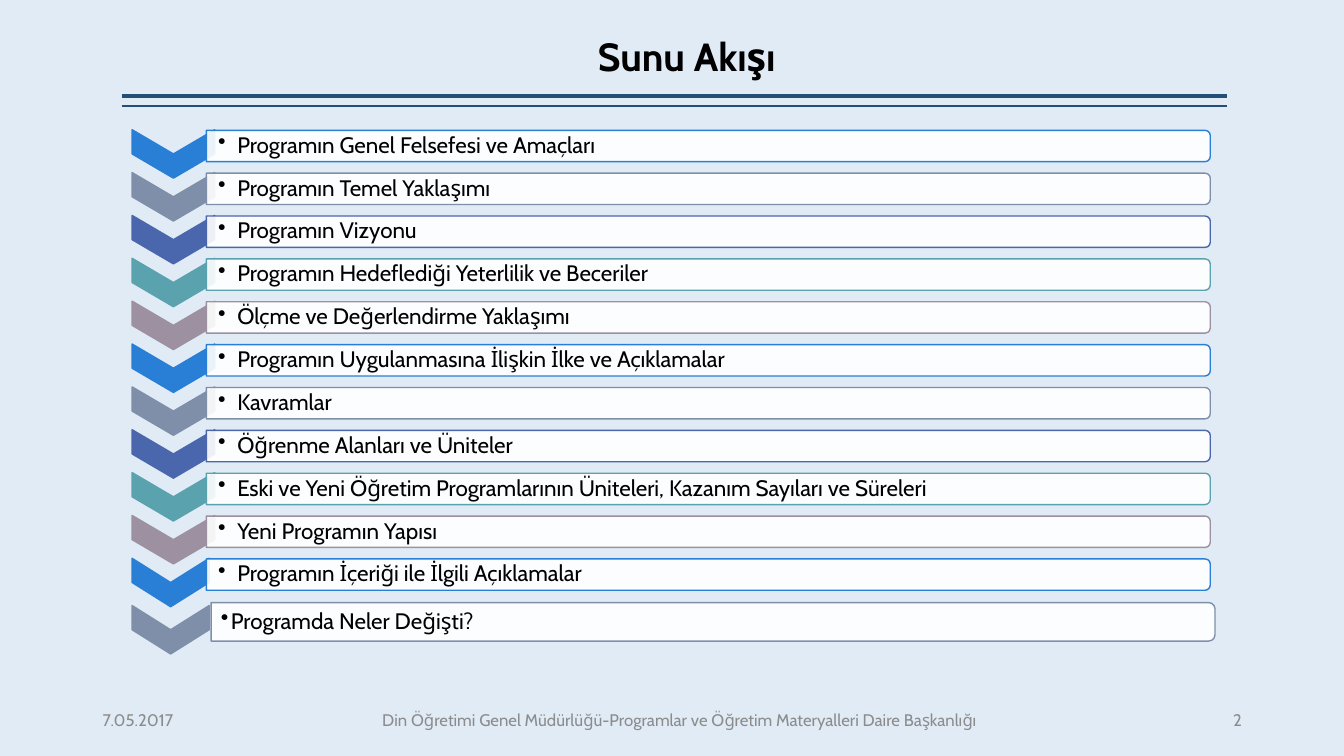
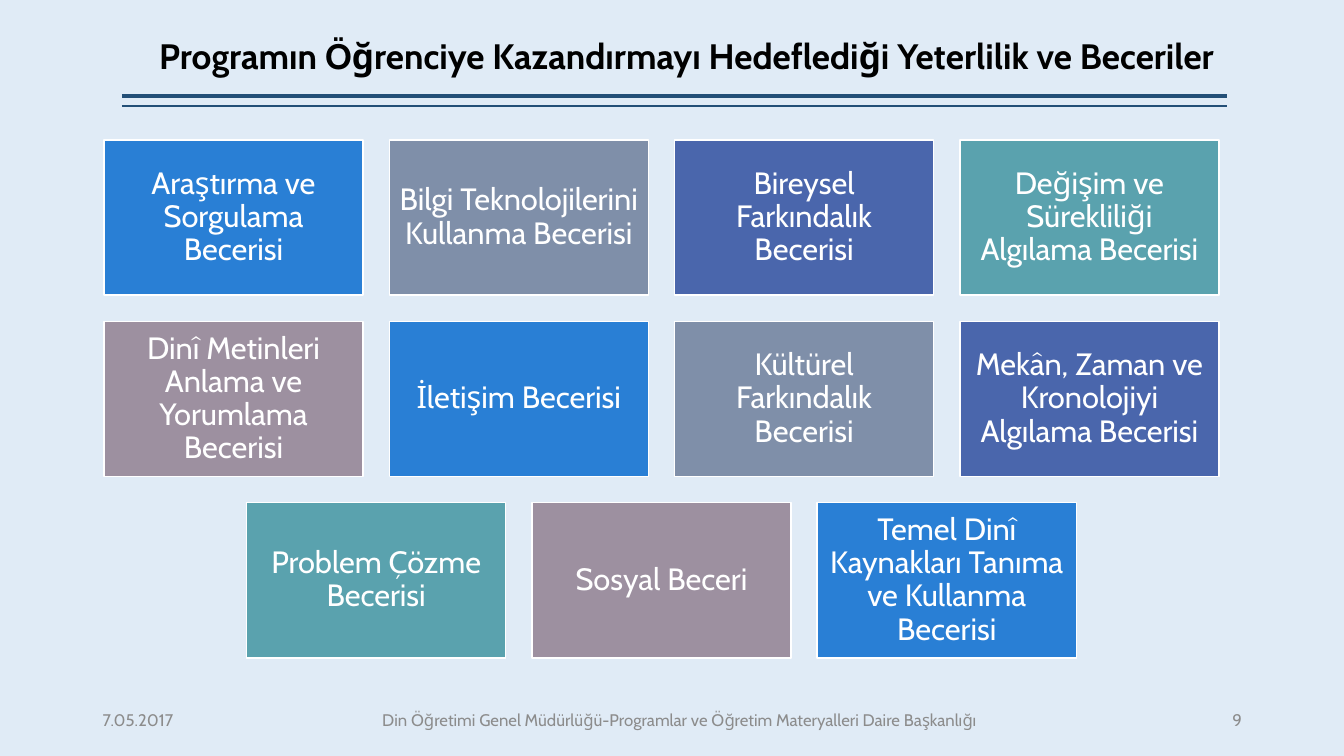
"""Build two slides: the talk outline and the grid of skills."""
from itertools import cycle

from lxml.etree import SubElement
from pptx import Presentation
from pptx.dml.color import RGBColor
from pptx.enum.shapes import MSO_CONNECTOR as Connector, MSO_SHAPE as Shape
from pptx.enum.text import MSO_ANCHOR as Anchor, MSO_AUTO_SIZE as AutoSize, PP_ALIGN as Align
from pptx.oxml.ns import qn
from pptx.util import Cm, Pt

COLORS = {
    "background": "E0EBF6", "rule": "234F77", "text": "000000", "footer": "8C8C8C",
    "white": "FFFFFF", "blue": "297FD5", "slate": "7F8FA9", "indigo": "4A66AC",
    "teal": "5AA2AE", "mauve": "9D90A0",
}
ACCENTS = ["blue", "slate", "indigo", "teal", "mauve"]
FONT = "Cabin"
DATE = "7.05.2017"
DEPARTMENT = "Din Öğretimi Genel Müdürlüğü-Programlar ve Öğretim Materyalleri Daire Başkanlığı"

TOPICS = [
    "Programın Genel Felsefesi ve Amaçları",
    "Programın Temel Yaklaşımı",
    "Programın Vizyonu",
    "Programın Hedeflediği Yeterlilik ve Beceriler",
    "Ölçme ve Değerlendirme Yaklaşımı",
    "Programın Uygulanmasına İlişkin İlke ve Açıklamalar",
    "Kavramlar",
    "Öğrenme Alanları ve Üniteler",
    "Eski ve Yeni Öğretim Programlarının Üniteleri, Kazanım Sayıları ve Süreleri",
    "Yeni Programın Yapısı",
    "Programın İçeriği ile İlgili Açıklamalar",
    "Programda Neler Değişti?",
]
SKILLS = [
    "Araştırma ve Sorgulama Becerisi",
    "Bilgi Teknolojilerini Kullanma Becerisi",
    "Bireysel Farkındalık Becerisi",
    "Değişim ve Sürekliliği Algılama Becerisi",
    "Dinî Metinleri Anlama ve Yorumlama Becerisi",
    "İletişim Becerisi",
    "Kültürel Farkındalık Becerisi",
    "Mekân, Zaman ve Kronolojiyi Algılama Becerisi",
    "Problem Çözme Becerisi",
    "Sosyal Beceri",
    "Temel Dinî Kaynakları Tanıma ve Kullanma Becerisi",
]


def rgb(name):
    """Return the named palette colour."""
    return RGBColor.from_string(COLORS[name])


class Deck:
    """Hold the shared style and the slide being built."""

    def __init__(self):
        """Start a wide presentation with a plain background."""
        self.prs = Presentation()
        self.prs.slide_width, self.prs.slide_height = Cm(33.87), Cm(19.05)
        backdrop = self.prs.slide_master.background.fill
        backdrop.solid()
        backdrop.fore_color.rgb = rgb("background")
        self.slide = None

    def new_slide(self, title, number, size):
        """Add a slide with its title, double rule and footer."""
        self.slide = self.prs.slides.add_slide(self.prs.slide_layouts[5])
        for y, weight in ((2.41, 3), (2.67, 1)):
            self.rule(y, weight)
        heading = self.slide.shapes.title
        heading.left, heading.top = Cm(3.07), Cm(0.41)
        heading.width, heading.height = Cm(28.47), Cm(2.13)
        self.set_text(heading, title, size, "text", Align.CENTER, bold=True)
        for text, left, width, align in (
            (DATE, 2.34, 3.18, Align.LEFT),
            (DEPARTMENT, 6.35, 21.56, Align.CENTER),
            (str(number), 28.6, 2.95, Align.RIGHT),
        ):
            self.set_text(self.text_box(left, 17.65, width, 1.02), text, 12, "footer", align)

    def text_box(self, left, top, width, height):
        """Add an empty text box."""
        return self.slide.shapes.add_textbox(Cm(left), Cm(top), Cm(width), Cm(height))

    def rule(self, y, weight):
        """Draw a horizontal line under the title."""
        line = self.slide.shapes.add_connector(
            Connector.STRAIGHT, Cm(3.07), Cm(y), Cm(30.91), Cm(y))
        line.line.color.rgb = rgb("rule")
        line.line.width = Pt(weight)
        SubElement(line._element.spPr, qn("a:effectLst"))

    def set_text(self, holder, text, size, color, align, bold=False, indent=None):
        """Put one styled paragraph in a shape, bulleted when indented."""
        frame = holder.text_frame
        frame.word_wrap = True
        frame.auto_size = AutoSize.NONE
        frame.vertical_anchor = Anchor.MIDDLE
        paragraph = frame.paragraphs[0]
        paragraph.text = text
        paragraph.alignment = align
        paragraph.line_spacing = 0.9
        if indent:
            properties = paragraph._p.get_or_add_pPr()
            properties.set("marL", str(Cm(indent)))
            properties.set("indent", str(-Cm(indent)))
            SubElement(properties, qn("a:buChar"), char="•")
        font = paragraph.font
        font.name, font.size, font.bold = FONT, Pt(size), bold
        font.color.rgb = rgb(color)

    def block(self, kind, left, top, width, height, fill, line):
        """Add a flat filled shape with a thin outline."""
        shape = self.slide.shapes.add_shape(kind, Cm(left), Cm(top), Cm(width), Cm(height))
        shape.shadow.inherit = False
        shape.fill.solid()
        shape.fill.fore_color.rgb = rgb(fill)
        shape.line.color.rgb = rgb(line)
        shape.line.width = Pt(1)
        return shape

    def turned(self, kind, center, middle, across, down, fill, line):
        """Add a block turned a quarter clockwise around its centre."""
        shape = self.block(kind, center - down / 2, middle - across / 2, down, across, fill, line)
        shape.rotation = 90
        return shape

    def chevron(self, center, middle, across, color):
        """Add a chevron that points down."""
        self.turned(Shape.CHEVRON, center, middle, across, 1.22, color, color)

    def topic(self, text, middle, color, left=5.2, height=0.79, inset=0.3, indent=0.48):
        """Add a translucent bar, rounded on the right, with a bulleted label."""
        width = 25.3
        bar = self.turned(Shape.ROUND_2_SAME_RECTANGLE, left + width / 2, middle,
                          width, height, "white", color)
        tint = bar._element.spPr.find(qn("a:solidFill")).find(qn("a:srgbClr"))
        SubElement(tint, qn("a:alpha"), val="90000")
        label = self.text_box(left, middle - height / 2, width, height)
        frame = label.text_frame
        frame.margin_left = Cm(inset)
        frame.margin_top = frame.margin_right = frame.margin_bottom = Cm(0.03)
        self.set_text(label, text, 16, "text", Align.LEFT, indent=indent)

    def skill(self, text, left, top, width, height, color):
        """Add a coloured card with centred text."""
        card = self.block(Shape.RECTANGLE, left, top, width, height, color, "white")
        frame = card.text_frame
        frame.margin_left = frame.margin_right = Cm(0.23)
        frame.margin_top = frame.margin_bottom = Cm(0.23)
        self.set_text(card, text, 22, "white", Align.CENTER)


def outline(deck):
    """Build the outline slide."""
    deck.new_slide("Sunu Akışı", 2, 28)
    last = len(TOPICS) - 1
    for index, (topic, color) in enumerate(zip(TOPICS, cycle(ACCENTS))):
        middle = 3.68 + 1.08 * index
        closing = {}
        if index == last:
            middle += 0.11
            closing = {"left": 5.32, "height": 0.97, "inset": 0.25, "indent": 0.25}
        center, across = (4.37, 2.08) if index < last - 1 else (4.3, 1.94)
        deck.chevron(center, middle + 0.2, across, color)
        deck.topic(topic, middle, color, **closing)


def skills(deck):
    """Build the skills slide, centring each row of cards."""
    deck.new_slide("Programın Öğrenciye Kazandırmayı Hedeflediği Yeterlilik ve Beceriler", 9, 25.2)
    columns, width, height, gap = 4, 6.53, 3.91, 0.66
    for index, (skill, color) in enumerate(zip(SKILLS, cycle(ACCENTS))):
        row, column = divmod(index, columns)
        missing = columns - min(columns, len(SKILLS) - row * columns)
        left = 2.62 + (column + missing / 2) * (width + gap)
        deck.skill(skill, left, 3.53 + row * (height + gap), width, height, color)


def main():
    """Build and save the presentation."""
    deck = Deck()
    outline(deck)
    skills(deck)
    deck.prs.save("out.pptx")


if __name__ == "__main__":
    main()
